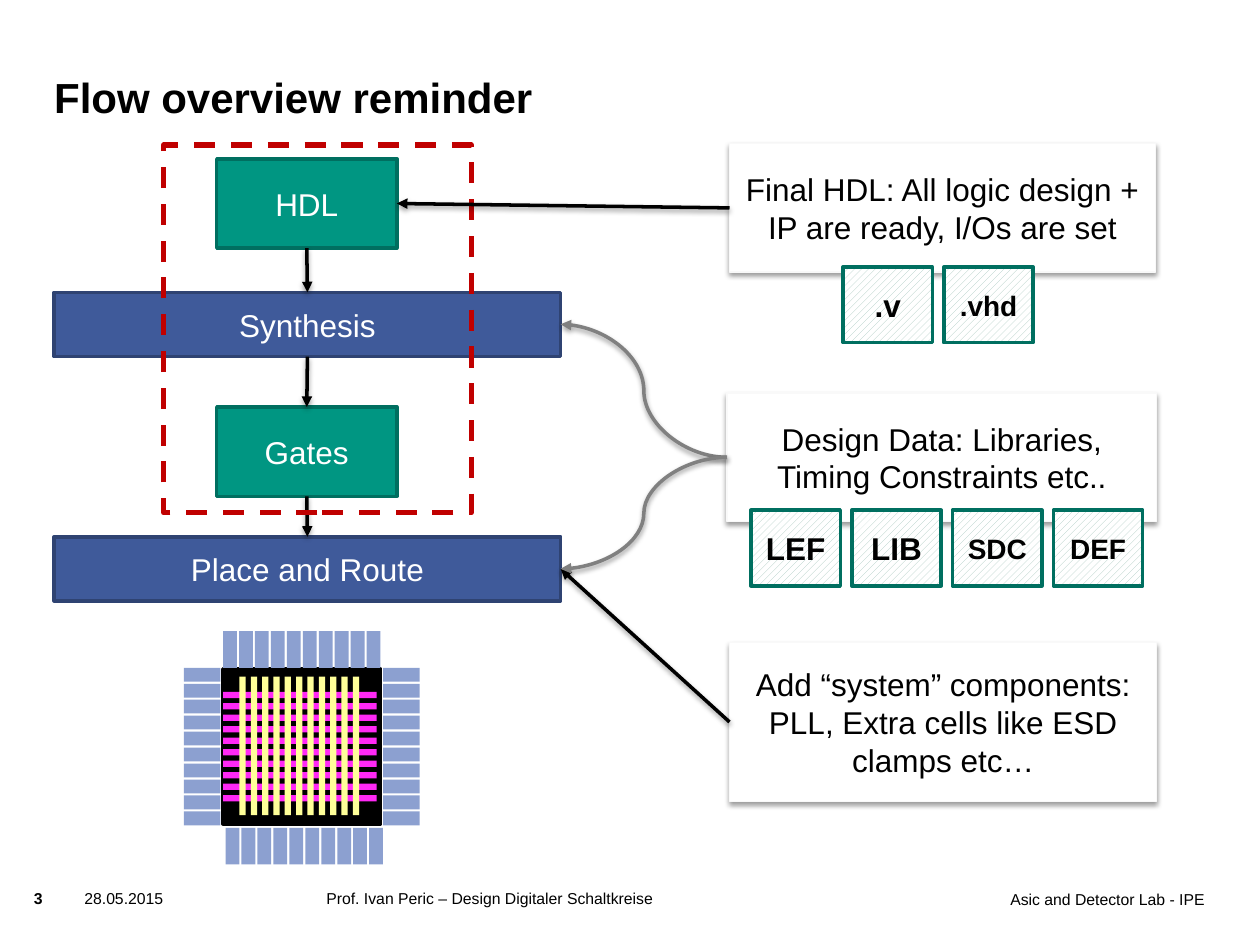
from dataclasses import dataclass

from lxml.etree import SubElement
from pptx import Presentation
from pptx.dml.color import RGBColor
from pptx.enum.dml import MSO_LINE, MSO_PATTERN
from pptx.enum.shapes import MSO_CONNECTOR, MSO_SHAPE
from pptx.enum.text import MSO_ANCHOR, PP_ALIGN
from pptx.oxml.ns import qn
from pptx.util import Inches, Pt


@dataclass(frozen=True)
class Theme:
    font: str = "Arial"
    black: str = "000000"
    white: str = "FFFFFF"
    green: str = "009682"
    green_edge: str = "006F60"
    blue: str = "3F5A9A"
    blue_edge: str = "2F4372"
    card_edge: str = "F9F9F9"
    hatch: str = "AAC9C1"
    red: str = "C00000"
    gray: str = "808080"
    pad: str = "8CA0D0"
    magenta: str = "FF29F5"
    yellow: str = "FFFF99"
    title_size: int = 24
    body_size: int = 18
    tag_size: int = 16
    footer_size: int = 9


@dataclass(frozen=True)
class Box:
    left: float
    top: float
    width: float
    height: float

    def inner(self, left, top, width, height):
        return Box(self.left + left, self.top + top, width, height)

    def emu(self):
        return [Inches(v) for v in (self.left, self.top, self.width, self.height)]

    def middle_left(self):
        return self.left, self.top + self.height / 2

    def middle_right(self):
        return self.left + self.width, self.top + self.height / 2

    def top_center(self):
        return self.left + self.width / 2, self.top

    def bottom_center(self):
        return self.left + self.width / 2, self.top + self.height


THEME = Theme()


def rgb(color):
    return RGBColor.from_string(color)


def add_shadow(shape):
    effects = shape._element.spPr.get_or_add_effectLst() if hasattr(
        shape._element.spPr, "get_or_add_effectLst") else SubElement(
        shape._element.spPr, qn("a:effectLst"))
    shadow = SubElement(effects, qn("a:outerShdw"), blurRad=str(Pt(3.1)),
                        dist=str(Pt(1.6)), dir="5400000", rotWithShape="0")
    color = SubElement(shadow, qn("a:srgbClr"), val=THEME.black)
    SubElement(color, qn("a:alpha"), val="38000")


def write(frame, text, size, color=THEME.black, bold=False, align=PP_ALIGN.CENTER):
    frame.word_wrap = True
    paragraph = frame.paragraphs[0]
    paragraph.text = text
    paragraph.alignment = align
    font = paragraph.font
    font.name, font.size, font.bold = THEME.font, Pt(size), bold
    font.color.rgb = rgb(color)


def add_rectangle(shapes, box, fill=None, edge=None, edge_width=2):
    shape = shapes.add_shape(MSO_SHAPE.RECTANGLE, *box.emu())
    shape.shadow.inherit = False
    if fill:
        shape.fill.solid()
        shape.fill.fore_color.rgb = rgb(fill)
    else:
        shape.fill.background()
    if edge:
        shape.line.color.rgb = rgb(edge)
        shape.line.width = Pt(edge_width)
    else:
        shape.line.fill.background()
    return shape


def add_label(slide, box, text, size, bold=False, align=PP_ALIGN.LEFT, anchor=MSO_ANCHOR.TOP):
    frame = slide.shapes.add_textbox(*box.emu()).text_frame
    frame.margin_left = frame.margin_right = frame.margin_top = frame.margin_bottom = 0
    frame.vertical_anchor = anchor
    write(frame, text, size, bold=bold, align=align)


def add_arrow(slide, start, end, color=THEME.black, kind=MSO_CONNECTOR.STRAIGHT):
    arrow = slide.shapes.add_connector(kind, *[Inches(v) for v in (*start, *end)])
    arrow.line.color.rgb = rgb(color)
    arrow.line.width = Pt(2)
    SubElement(arrow.line._get_or_add_ln(), qn("a:tailEnd"), type="triangle")
    add_shadow(arrow)


def add_flow(slide, box):
    stage_left, stage_width = 1.29, 1.43
    steps = [
        ("HDL", box.inner(stage_left, 0.11, stage_width, 0.71), THEME.green, THEME.green_edge),
        ("Synthesis", box.inner(0, 1.17, box.width, 0.51), THEME.blue, THEME.blue_edge),
        ("Gates", box.inner(stage_left, 2.08, stage_width, 0.71), THEME.green, THEME.green_edge),
        ("Place and Route", box.inner(0, 3.11, box.width, 0.51), THEME.blue, THEME.blue_edge),
    ]
    for text, place, fill, edge in steps:
        shape = add_rectangle(slide.shapes, place, fill, edge)
        write(shape.text_frame, text, THEME.body_size, THEME.white)
    places = [place for _, place, _, _ in steps]
    for upper, lower in zip(places, places[1:]):
        add_arrow(slide, upper.bottom_center(), lower.top_center())
    frame = add_rectangle(slide.shapes, box.inner(0.87, 0, 2.44, 2.92), None, THEME.red, 3)
    frame.line.dash_style = MSO_LINE.DASH
    return places


def add_card(slide, box, text, tags=(), tag_left=0, tag_top=0):
    card = add_rectangle(slide.shapes, box, THEME.white, THEME.card_edge, 0.75)
    add_shadow(card)
    write(card.text_frame, text, THEME.body_size)
    for index, (name, size) in enumerate(tags):
        place = box.inner(tag_left + 0.8 * index, tag_top, 0.71, 0.6)
        tag = add_rectangle(slide.shapes, place, THEME.white, THEME.green_edge)
        tag.fill.patterned()
        tag.fill.pattern = MSO_PATTERN.WIDE_UPWARD_DIAGONAL
        tag.fill.fore_color.rgb = rgb(THEME.hatch)
        tag.fill.back_color.rgb = rgb(THEME.white)
        write(tag.text_frame, name, size, bold=True)


def add_chip(slide, box):
    shapes = slide.shapes.add_group_shape().shapes
    add_rectangle(shapes, box.inner(0.31, 0.3, 1.25, 1.23), THEME.black, THEME.black)
    length, thickness, count = 0.29, 0.11, 10
    for index in range(count):
        offset = 1.14 * index / (count - 1)
        pads = [
            (0, 0.29 + offset, length, thickness),
            (box.width - length, 0.29 + offset, length, thickness),
            (0.31 + offset, 0, thickness, length),
            (0.33 + offset, box.height - length, thickness, length),
        ]
        for pad in pads:
            add_rectangle(shapes, box.inner(*pad), THEME.pad)
    for index in range(10):
        row = box.inner(0.31, 0.48 + 0.82 * index / 9, 1.22, 0.05)
        add_rectangle(shapes, row, THEME.magenta)
    for index in range(11):
        add_rectangle(shapes, box.inner(0.44 + 0.09 * index, 0.36, 0.05, 1.1), THEME.yellow)


def add_footer(slide, box):
    size = THEME.footer_size
    add_label(slide, box.inner(0, 0, 0.36, 0.24), "3", size, bold=True)
    add_label(slide, box.inner(0.4, 0, 0.94, 0.39), "28.05.2015", size)
    add_label(slide, box.inner(2.32, 0, 2.99, 0.39),
              "Prof. Ivan Peric – Design Digitaler Schaltkreise", size)
    add_label(slide, box.inner(box.width - 2.99, 0.01, 2.99, 0.39),
              "Asic and Detector Lab - IPE", size, align=PP_ALIGN.RIGHT)


def main():
    presentation = Presentation()
    presentation.slide_width, presentation.slide_height = Inches(10), Inches(7.5)
    slide = presentation.slides.add_slide(presentation.slide_layouts[6])
    body, small = THEME.body_size, THEME.tag_size

    add_label(slide, Box(0.43, 0.36, 7.56, 0.61), "Flow overview reminder",
              THEME.title_size, bold=True, anchor=MSO_ANCHOR.BOTTOM)
    hdl, synthesis, _, route = add_flow(slide, Box(0.43, 1.15, 4.02, 3.62))
    add_chip(slide, Box(1.46, 5.01, 1.87, 1.85))

    final, data, system = (Box(5.79, 1.14, 3.38, 1.02), Box(5.77, 3.12, 3.41, 1.02),
                           Box(5.79, 5.1, 3.39, 1.26))
    add_card(slide, final, "Final HDL: All logic design + IP are ready, I/Os are set",
             [(".v", body), (".vhd", small)], 0.9, 0.98)
    add_card(slide, data, "Design Data: Libraries, Timing Constraints etc..",
             [("LEF", body), ("LIB", body), ("SDC", small), ("DEF", small)], 0.19, 0.93)
    add_card(slide, system, "Add “system” components: PLL, Extra cells like ESD clamps etc…")

    add_arrow(slide, final.middle_left(), hdl.middle_right())
    add_arrow(slide, system.middle_left(), route.middle_right())
    for target in (synthesis, route):
        add_arrow(slide, data.middle_left(), target.middle_right(),
                  THEME.gray, MSO_CONNECTOR.CURVE)
    add_footer(slide, Box(0.27, 7.05, 9.29, 0.4))
    presentation.save("out.pptx")


if __name__ == "__main__":
    main()
